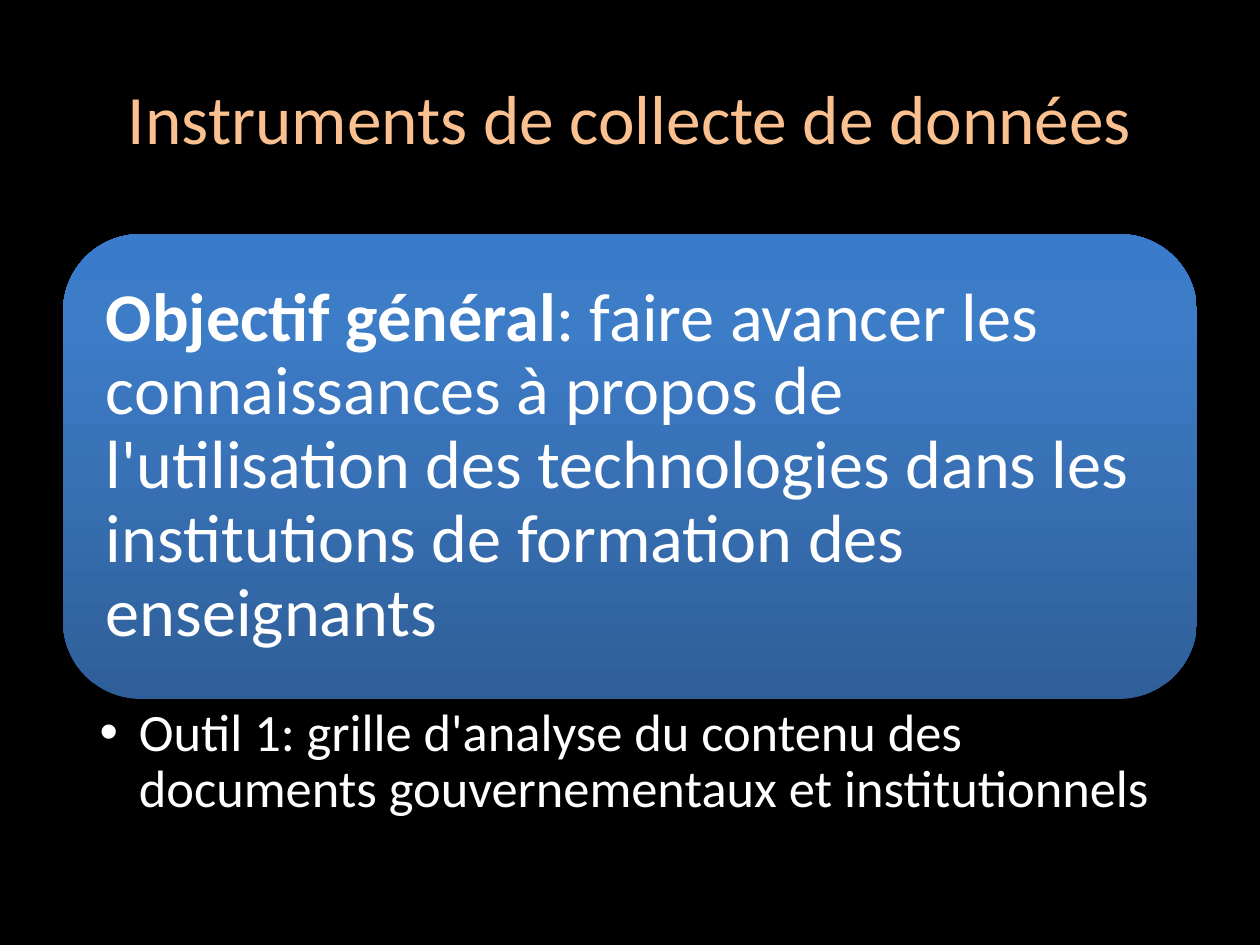
"""Build the slide on data collection instruments."""
import copy

import pptx
import pptx.util
import pptx.dml.color
import pptx.enum.shapes
import pptx.enum.text

Cm = pptx.util.Cm
Pt = pptx.util.Pt
ALIGN = pptx.enum.text.PP_ALIGN
ANCHOR = pptx.enum.text.MSO_ANCHOR


def shade(code):
    return pptx.dml.color.RGBColor.from_string(code)


class Deck:
    font = "Calibri"
    back = "000000"
    white = "FFFFFF"
    peach = "FAC090"
    blues = ((0, "2F5F99"), (0.8, "3D7CC7"), (1, "3A7CCB"))
    left = 1.27
    width = 22.86

    def __init__(self):
        self.prs = pptx.Presentation()
        self.prs.slide_width = Cm(25.4)
        self.prs.slide_height = Cm(19.05)
        self.slide = self.prs.slides.add_slide(self.prs.slide_layouts[1])
        fill = self.slide.background.fill
        fill.solid()
        fill.fore_color.rgb = shade(self.back)

    def place(self, shape, top, height):
        shape.left, shape.top = Cm(self.left), Cm(top)
        shape.width, shape.height = Cm(self.width), Cm(height)

    def label(self, shape, text, size, color, align, anchor, pads, lead=1.0):
        frame = shape.text_frame
        frame.text = text
        frame.word_wrap = True
        frame.auto_size = pptx.enum.text.MSO_AUTO_SIZE.NONE
        frame.vertical_anchor = anchor
        frame.margin_left, frame.margin_right = Cm(pads[0]), Cm(pads[0])
        frame.margin_top, frame.margin_bottom = Cm(pads[1]), Cm(pads[1])
        par = frame.paragraphs[0]
        par.alignment = align
        par.line_spacing = lead
        par.space_before = Pt(0)
        for run in par.runs:
            self.style(run, size, color)
        return par

    def style(self, run, size, color, bold=False):
        run.font.name = self.font
        run.font.size = Pt(size)
        run.font.bold = bold
        run.font.color.rgb = shade(color)

    def title(self, text, top, height):
        shape = self.slide.shapes.title
        self.place(shape, top, height)
        self.label(shape, text, 39.6, self.peach, ALIGN.CENTER,
                   ANCHOR.MIDDLE, (0.25, 0.13))

    def panel(self, lead, rest, top, height):
        kind = pptx.enum.shapes.MSO_SHAPE.ROUNDED_RECTANGLE
        shape = self.slide.shapes.add_shape(kind, 0, 0, 0, 0)
        self.place(shape, top, height)
        shape.shadow.inherit = False
        shape.line.fill.background()
        self.blend(shape.fill)
        par = self.label(shape, lead, 39, self.white, ALIGN.LEFT,
                         ANCHOR.MIDDLE, (0.41, 0.41), 0.9)
        par.runs[0].font.bold = True
        run = par.add_run()
        run.text = rest
        self.style(run, 39, self.white)

    def blend(self, fill):
        fill.gradient()
        fill.gradient_angle = 90
        last = fill.gradient_stops[1]._gs
        last.addnext(copy.deepcopy(last))
        for stop, (pos, code) in zip(fill.gradient_stops, self.blues):
            stop.position = pos
            stop.color.rgb = shade(code)

    def body(self, text, top, height):
        shape = self.slide.placeholders[1]
        self.place(shape, top, height)
        par = self.label(shape, text, 30, self.white, ALIGN.LEFT,
                         ANCHOR.TOP, (0.74, 0.13), 0.9)
        props = par._p.get_or_add_pPr()
        props.set("marL", str(Cm(0.79)))
        props.set("indent", str(-Cm(0.79)))

    def save(self):
        self.prs.save("out.pptx")


def main():
    deck = Deck()
    deck.title("Instruments de collecte de données", 0.76, 3.18)
    deck.panel("Objectif général",
               ": faire avancer les connaissances à propos de "
               "l'utilisation des technologies dans les institutions "
               "de formation des enseignants", 4.72, 9.37)
    deck.body("Outil 1: grille d'analyse du contenu des documents "
              "gouvernementaux et institutionnels", 14.1, 2.64)
    deck.save()


if __name__ == "__main__":
    main()
